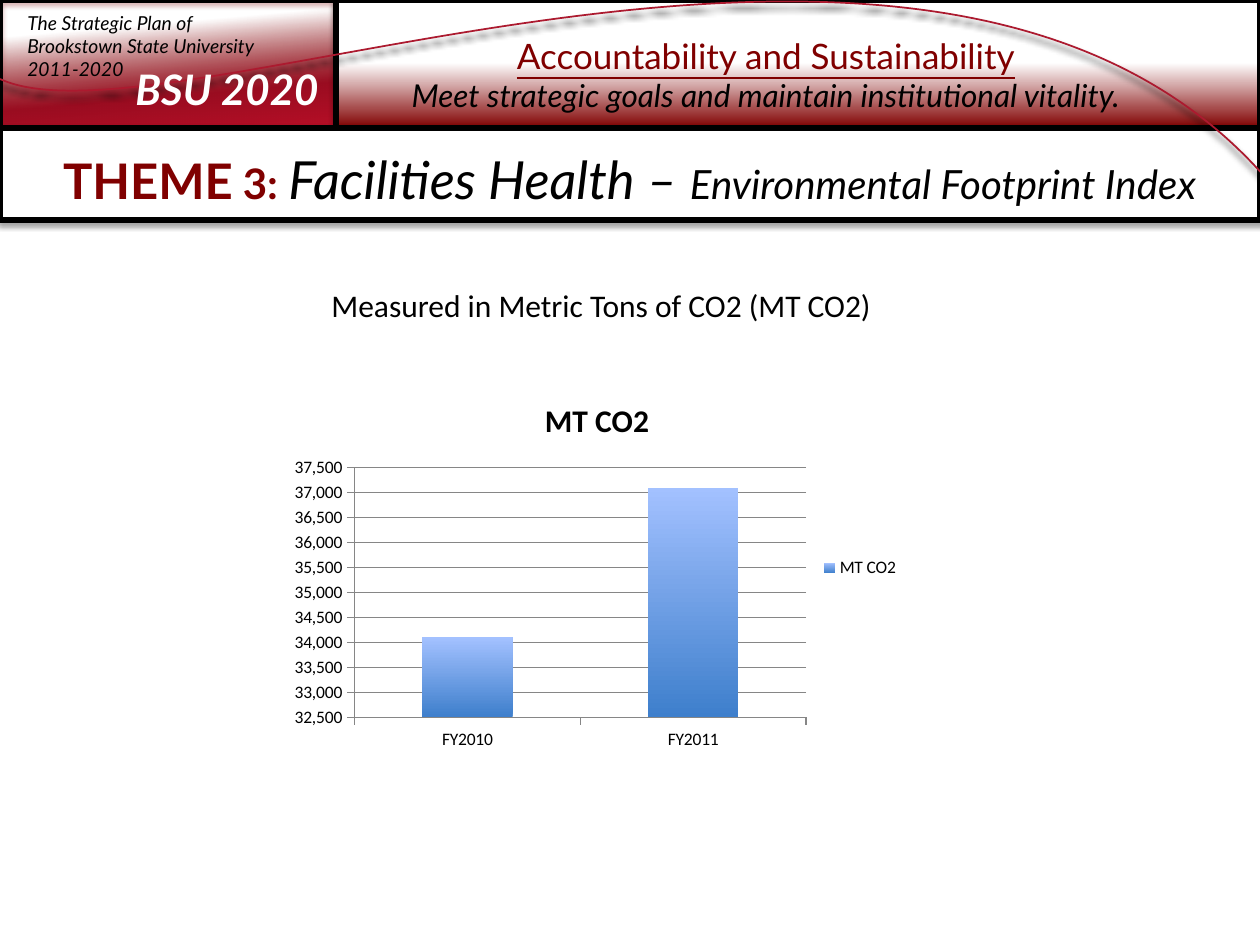
import lxml.etree
import pptx
import pptx.chart.data
import pptx.dml.color
import pptx.enum.chart
import pptx.enum.shapes
import pptx.enum.text
import pptx.oxml.ns
import pptx.util

EMU_PER_PX = 914400 / 126
COLOURS = {
    "black": "000000", "white": "FFFFFF", "maroon": "800000",
    "crimson": "9A0D21", "red": "B70F27", "curve": "AC1A2F",
    "grid": "868686", "bar_top": "A3C1FF", "bar_bottom": "3E7FCC",
}
CENTER = pptx.enum.text.PP_ALIGN.CENTER


def px(length):
    """Turn pixels into EMU."""
    return pptx.util.Emu(round(length * EMU_PER_PX))


def colour(name):
    """Look up a named colour."""
    return pptx.dml.color.RGBColor.from_string(COLOURS[name])


def child(parent, tag, **attributes):
    """Append a drawing element with the given attributes."""
    element = lxml.etree.SubElement(parent, pptx.oxml.ns.qn(f"a:{tag}"))
    for key, value in attributes.items():
        element.set(key, str(value))
    return element


def paint_gradient(fill, holder, stops, angle):
    """Fill with (percent, colour, opacity) stops at a clockwise angle."""
    fill.gradient()
    fill.gradient_angle = 360 - angle
    stop_list = next(holder.iter(pptx.oxml.ns.qn("a:gsLst")))
    for old_stop in list(stop_list):
        stop_list.remove(old_stop)
    for percent, name, opacity in stops:
        stop = child(stop_list, "gs", pos=percent * 1000)
        tint = child(stop, "srgbClr", val=COLOURS[name])
        child(tint, "alpha", val=opacity * 1000)


def cast_shadow(shape, name="black", opacity=35, blur=3.1, distance=1.8):
    """Give a shape a soft shadow below it."""
    shape.shadow.inherit = False
    effects = shape.element.spPr.find(pptx.oxml.ns.qn("a:effectLst"))
    shadow = child(effects, "outerShdw", blurRad=pptx.util.Pt(blur),
                   dist=pptx.util.Pt(distance), dir=90 * 60000, rotWithShape=0)
    tint = child(shadow, "srgbClr", val=COLOURS[name])
    child(tint, "alpha", val=opacity * 1000)


def add_panel(page, box, shadow="black"):
    """Add a white, black-edged rectangle with a shadow."""
    panel = page.shapes.add_shape(
        pptx.enum.shapes.MSO_SHAPE.RECTANGLE, *map(px, box))
    panel.fill.solid()
    panel.fill.fore_color.rgb = colour("white")
    panel.line.color.rgb = colour("black")
    panel.line.width = pptx.util.Pt(3.5)
    cast_shadow(panel, shadow)
    return panel


def style_font(font, size, name, bold=False, italic=False, underline=False, face="Lato"):
    """Set all the font properties of a paragraph or run."""
    font.name, font.size = face, pptx.util.Pt(size)
    font.bold, font.italic, font.underline = bold, italic, underline
    font.color.rgb = colour(name)


def add_text(page, box, lines, align=None):
    """Add a text box with one (text, font settings) pair per paragraph."""
    frame = page.shapes.add_textbox(*map(px, box)).text_frame
    frame.word_wrap = True
    for index, (text, settings) in enumerate(lines):
        para = frame.add_paragraph() if index else frame.paragraphs[0]
        para.text = text
        para.alignment = align
        style_font(para.font, **settings)


def add_plan_panel(page, box):
    """Draw the red panel and its plan name."""
    left, top = box[:2]
    panel = add_panel(page, box, "maroon")
    paint_gradient(panel.fill, panel.element,
                   [(24, "maroon", 0), (71, "crimson", 100), (100, "red", 100)], 85)
    small = dict(size=11, name="black", italic=True)
    lines = ["The Strategic Plan of", "Brookstown State University", "2011-2020"]
    add_text(page, (left + 15, top + 5, 402, 83), [(line, small) for line in lines])


def add_goal_panel(page, box):
    """Draw the fading panel and its goal."""
    left, top, width, height = box
    panel = add_panel(page, box)
    paint_gradient(panel.fill, panel.element,
                   [(0, "maroon", 100), (51, "white", 100)], 270)
    add_text(page, (left - 32, top + 28, width, 93), [
        ("Accountability and Sustainability", dict(size=20, name="maroon", underline=True)),
        ("Meet strategic goals and maintain institutional vitality.",
         dict(size=18, name="black", italic=True)),
    ], CENTER)


def add_curve(page, points):
    """Draw one cubic curve through a start, two controls and an end."""
    builder = page.shapes.build_freeform(*points[0], scale=EMU_PER_PX)
    builder.add_line_segments(points[1:], close=False)
    curve = builder.convert_to_shape()
    segments = list(curve.element.iter(pptx.oxml.ns.qn("a:lnTo")))
    bezier = child(segments[0].getparent(), "cubicBezTo")
    for segment in segments:
        bezier.append(segment[0])
        segment.getparent().remove(segment)
    curve.fill.background()
    curve.line.color.rgb = colour("curve")
    curve.line.width = pptx.util.Pt(1)
    cast_shadow(curve, opacity=90, blur=4, distance=3)


def add_theme_title(page, box):
    """Place the title placeholder in front with its mixed fonts."""
    title = page.shapes.title
    title.left, title.top, title.width, title.height = map(px, box)
    title.element.getparent().append(title.element)
    frame = title.text_frame
    frame.auto_size = pptx.enum.text.MSO_AUTO_SIZE.NONE
    frame.vertical_anchor = pptx.enum.text.MSO_ANCHOR.TOP
    para = frame.paragraphs[0]
    para.alignment = CENTER
    for text, settings in [
        ("THEME", dict(size=28, name="maroon", bold=True)),
        (" 3: ", dict(size=24, name="maroon", bold=True)),
        ("Facilities Health – ", dict(size=30, name="black", italic=True)),
        ("Environmental Footprint Index", dict(size=23, name="black", italic=True)),
    ]:
        span = para.add_run()
        span.text = text
        style_font(span.font, **settings)


def add_emissions_chart(page, box):
    """Add the stacked column chart of yearly emissions."""
    data = pptx.chart.data.CategoryChartData(number_format="#,##0")
    data.categories = ["FY2010", "FY2011"]
    data.add_series("MT CO2", [34100, 37100])
    kind = pptx.enum.chart.XL_CHART_TYPE.COLUMN_STACKED
    chart = page.shapes.add_chart(kind, *map(px, box), data).chart
    style_font(chart.font, 10, "black", face="Calibri")
    chart.has_title = True
    heading = chart.chart_title.text_frame.paragraphs[0]
    heading.text = "MT CO2"
    style_font(heading.font, 18, "black", bold=True, face="Calibri")
    chart.has_legend = True
    chart.legend.position = pptx.enum.chart.XL_LEGEND_POSITION.RIGHT
    chart.legend.include_in_layout = False
    plot = chart.plots[0]
    plot.vary_by_categories = False
    plot.gap_width, plot.overlap = 150, 100
    series = plot.series[0]
    paint_gradient(series.format.fill, series._element,
                   [(0, "bar_bottom", 100), (100, "bar_top", 100)], 270)
    values = chart.value_axis
    values.minimum_scale, values.maximum_scale, values.major_unit = 32500, 37500, 500
    values.tick_labels.number_format = "#,##0"
    values.tick_labels.number_format_is_linked = False
    for axis in (chart.category_axis, values):
        axis.major_tick_mark = pptx.enum.chart.XL_TICK_MARK.OUTSIDE
        axis.format.line.color.rgb = colour("grid")
    values.major_gridlines.format.line.color.rgb = colour("grid")


def main():
    """Build the slide and save it."""
    deck = pptx.Presentation()
    deck.slide_width, deck.slide_height = px(1260), px(945)
    page = deck.slides.add_slide(deck.slide_layouts[5])
    add_plan_panel(page, (0, 0, 336, 128))
    add_goal_panel(page, (336, 0, 924, 128))
    add_panel(page, (0, 128, 1260, 92))
    add_curve(page, [(1338, 287), (1067, -261), (183, 164), (0, 79)])
    add_text(page, (123, 57, 219, 63),
             [("BSU 2020", dict(size=24, name="white", bold=True, italic=True))])
    add_theme_title(page, (0, 141, 1260, 77))
    add_text(page, (319, 280, 593, 50),
             [("Measured in Metric Tons of CO2 (MT CO2)",
               dict(size=18, name="black", face="Calibri"))])
    add_emissions_chart(page, (282, 379, 630, 378))
    deck.save("out.pptx")


if __name__ == "__main__":
    main()
